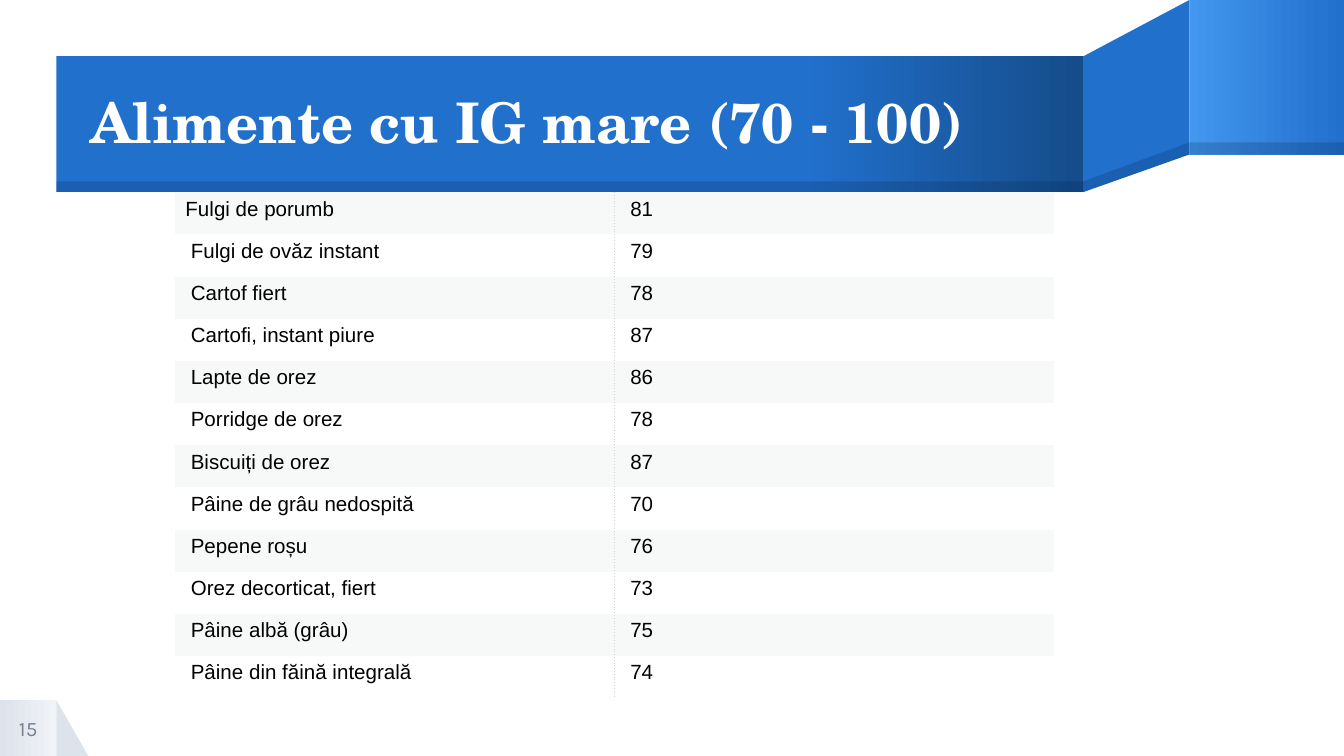
from typing import NamedTuple, Optional

from lxml import etree
from pptx import Presentation
from pptx import util as u
from pptx.dml.color import RGBColor
from pptx.enum import shapes, text
from pptx.oxml.ns import qn

BLUE, SHADE, WHITE = "2170CC", "001F46", "FFFFFF"
RECT = shapes.MSO_SHAPE.RECTANGLE


class Paint(NamedTuple):
    stops: tuple[tuple[int, str], ...]
    alpha: Optional[int] = None


class Block(NamedTuple):
    preset: shapes.MSO_SHAPE
    box: tuple[float, float, float, float]
    paint: Paint


class Outline(NamedTuple):
    points: tuple[tuple[float, float], ...]
    paint: Paint


class Label(NamedTuple):
    box: tuple[float, float, float, float]
    words: str
    font: str
    size: float
    color: str
    bold: bool = False
    align: text.PP_ALIGN = text.PP_ALIGN.LEFT
    spacing: float = 1.0


class Food(NamedTuple):
    name: str
    index: int
    indent: float = 0.12


FLAT = Paint(((0, BLUE),))
SHADOW = Paint(((0, SHADE),), 20)

DECOR = [
    Block(shapes.MSO_SHAPE.RIGHT_TRIANGLE, (0.42, 5.21, 0.24, 0.42), Paint(((0, "DDE3EB"),))),
    Block(RECT, (0, 5.21, 0.42, 0.42), Paint(((0, "DDE3EB"), (100, "F0F3F7")))),
    Outline(((8.85, 0), (8.06, 0.42), (8.06, 1.43), (8.85, 1.15)), FLAT),
    Block(RECT, (8.85, 0, 1.15, 1.15), Paint(((0, "4397EE"), (100, BLUE)))),
    Block(RECT, (0.42, 0.42, 7.64, 1.01), Paint(((0, BLUE), (73, BLUE), (100, "154C8A")))),
    Outline(((8.85, 1.06), (8.06, 1.35), (8.06, 1.43), (8.85, 1.15)), SHADOW),
    Block(RECT, (8.85, 1.06, 1.15, 0.09), SHADOW),
    Block(RECT, (0.42, 1.35, 7.64, 0.08), SHADOW),
]

LABELS = [
    Label((0.67, 0.43, 7.39, 1.01), "Alimente cu IG mare (70 - 100)", "TeX Gyre Schola", 30,
          WHITE, bold=True, spacing=0.9),
    Label((0, 5.21, 0.42, 0.42), "15", "Karla", 11, "748394", align=text.PP_ALIGN.CENTER),
]

FOODS = [
    Food("Fulgi de porumb", 81, 0.08),
    Food("Fulgi de ovăz instant", 79),
    Food("Cartof fiert", 78),
    Food("Cartofi, instant piure", 87),
    Food("Lapte de orez", 86),
    Food("Porridge de orez", 78),
    Food("Biscuiți de orez", 87),
    Food("Pâine de grâu nedospită", 70),
    Food("Pepene roșu", 76),
    Food("Orez decorticat, fiert", 73),
    Food("Pâine albă (grâu)", 75),
    Food("Pâine din făină integrală", 74),
]


def rgb(color: str) -> RGBColor:
    return RGBColor.from_string(color)


def paint_shape(sp, paint: Paint) -> None:
    sp.shadow.inherit = False
    sp.line.fill.background()
    if len(paint.stops) == 1:
        sp.fill.solid()
        sp.fill.fore_color.rgb = rgb(paint.stops[0][1])
        if paint.alpha is not None:
            clr = next(sp._element.spPr.iter(qn("a:srgbClr")))
            etree.SubElement(clr, qn("a:alpha"), val=str(paint.alpha * 1000))
        return
    sp.fill.gradient()
    sp.fill.gradient_angle = 0
    stops = next(sp._element.spPr.iter(qn("a:gsLst")))
    stops.clear()
    for pos, color in paint.stops:
        gs = etree.SubElement(stops, qn("a:gs"), pos=str(pos * 1000))
        etree.SubElement(gs, qn("a:srgbClr"), val=str(rgb(color)))


def draw_block(s, block: Block) -> None:
    sp = s.shapes.add_shape(block.preset, *map(u.Inches, block.box))
    paint_shape(sp, block.paint)


def draw_outline(s, outline: Outline) -> None:
    start, *rest = [(u.Inches(x), u.Inches(y)) for x, y in outline.points]
    builder = s.shapes.build_freeform(*start)
    builder.add_line_segments(rest, close=True)
    paint_shape(builder.convert_to_shape(), outline.paint)


def add_run(p, words: str, font: str, size: float, color: str, bold: bool = False) -> None:
    r = p.add_run()
    r.text = words
    r.font.name, r.font.size, r.font.bold = font, u.Pt(size), bold
    r.font.color.rgb = rgb(color)


def draw_label(s, label: Label) -> None:
    tf = s.shapes.add_textbox(*map(u.Inches, label.box)).text_frame
    tf.word_wrap = True
    tf.vertical_anchor = text.MSO_ANCHOR.MIDDLE
    tf.margin_left = tf.margin_right = tf.margin_top = tf.margin_bottom = 0
    p = tf.paragraphs[0]
    p.alignment, p.line_spacing = label.align, label.spacing
    add_run(p, label.words, label.font, label.size, label.color, label.bold)


def add_border(cell, side: str) -> None:
    ln = etree.Element(qn(f"a:{side}"), w=str(u.Pt(0.5)))
    fill = etree.SubElement(ln, qn("a:solidFill"))
    etree.SubElement(fill, qn("a:srgbClr"), val=str(rgb("D3D3D3")))
    etree.SubElement(ln, qn("a:prstDash"), val="dot")
    cell._tc.get_or_add_tcPr().insert(0, ln)


def fill_cell(cell, words: str, indent: float, color: str, side: str) -> None:
    cell.margin_left, cell.margin_right = u.Inches(indent), u.Inches(0.08)
    cell.margin_top = cell.margin_bottom = u.Inches(0.04)
    cell.fill.solid()
    cell.fill.fore_color.rgb = rgb(color)
    add_border(cell, side)
    add_run(cell.text_frame.paragraphs[0], words, "Arial", 11, "000000")


def draw_foods(s, foods: list[Food]) -> None:
    box = map(u.Inches, (1.3, 1.43, 6.54, 3.77))
    table = s.shapes.add_table(len(foods), 2, *box).table
    table.first_row = table.horz_banding = False
    style = next(table._tbl.iter(qn("a:tableStyleId")))
    style.text = "{2D5ABB26-0587-4C30-8999-92F81FD0307C}"
    for i, food in enumerate(foods):
        color = WHITE if i % 2 else "F7F9F9"
        fill_cell(table.cell(i, 0), food.name, food.indent, color, "lnR")
        fill_cell(table.cell(i, 1), str(food.index), 0.12, color, "lnL")


def main() -> None:
    """Build the slide listing foods with a high glycemic index."""
    prs = Presentation()
    prs.slide_width, prs.slide_height = u.Inches(10), u.Inches(10 * 9 / 16)
    s = prs.slides.add_slide(prs.slide_layouts[6])
    for item in DECOR:
        if isinstance(item, Block):
            draw_block(s, item)
        else:
            draw_outline(s, item)
    for label in LABELS:
        draw_label(s, label)
    draw_foods(s, FOODS)
    prs.save("out.pptx")


if __name__ == "__main__":
    main()
